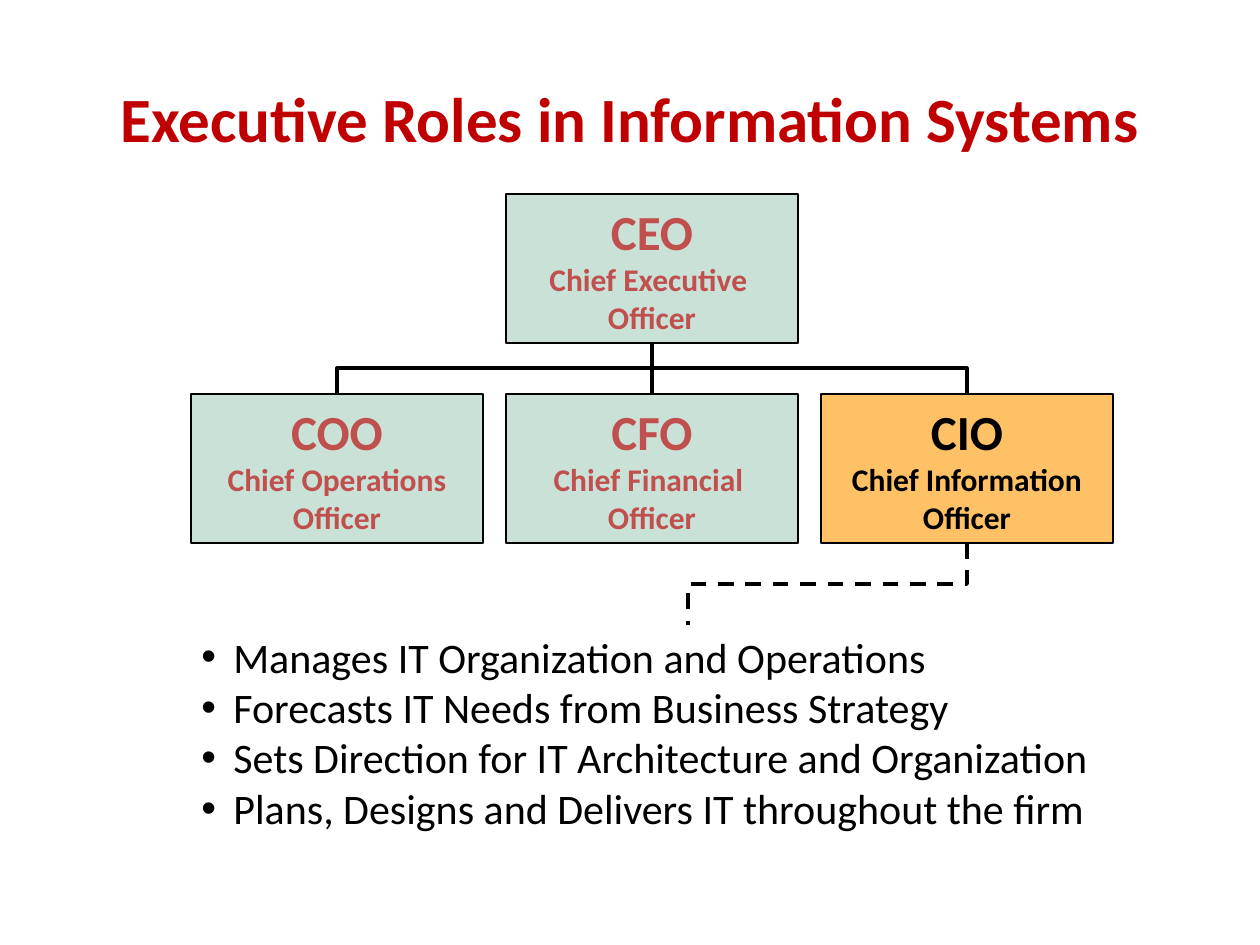
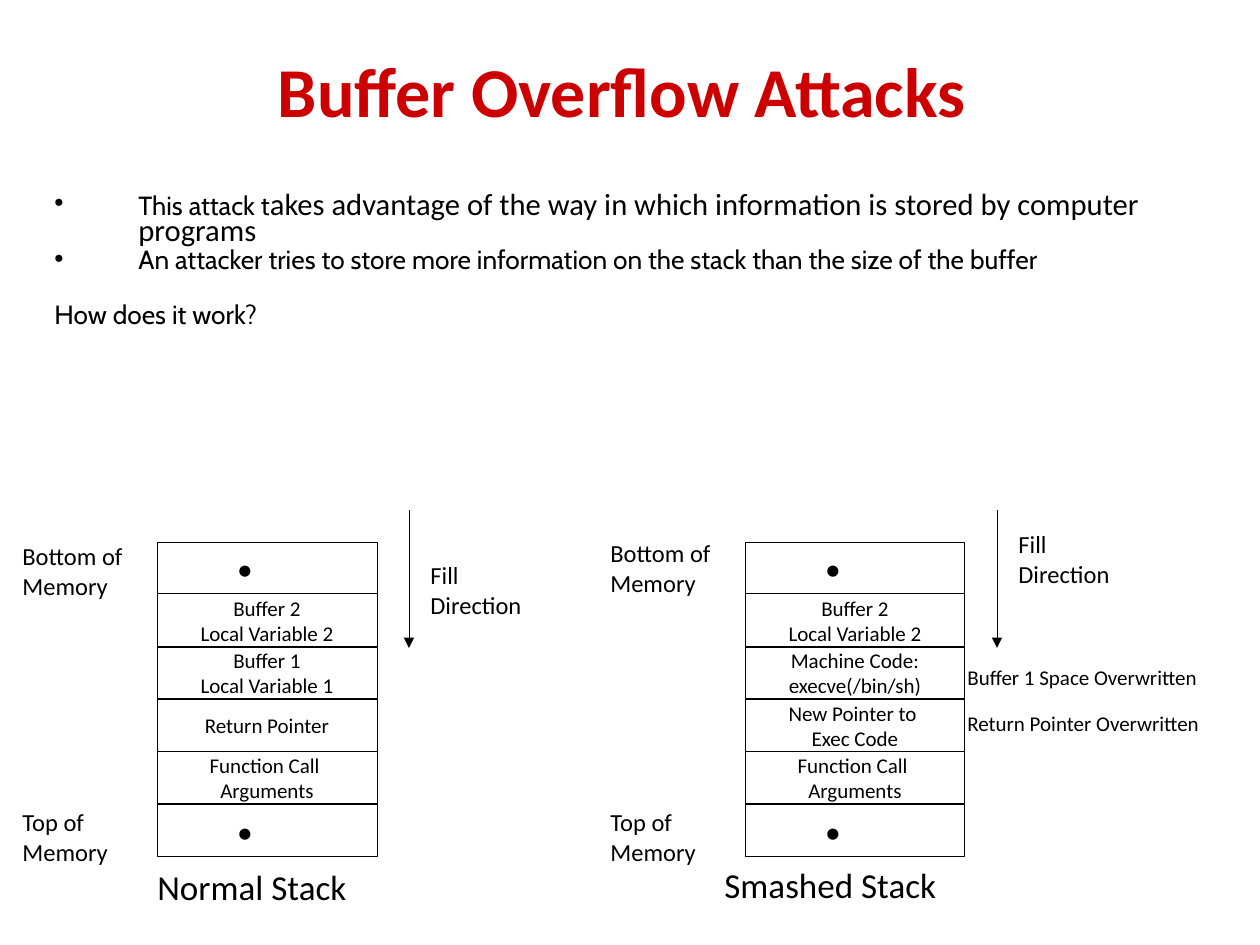
import lxml.etree
import pptx
import pptx.chart.data
import pptx.dml.color
import pptx.enum.dml
import pptx.enum.shapes
import pptx.enum.text
import pptx.oxml
import pptx.oxml.ns
import pptx.util

PIXELS_PER_INCH = 126
BLACK, WHITE = "000000", "FFFFFF"
ROLE_TEXT, ROLE_FILL, FOCUS_FILL = "C0504D", "CAE1D7", "FFC165"
SHAPES = pptx.enum.shapes.MSO_SHAPE
CONNECTORS = pptx.enum.shapes.MSO_CONNECTOR
MIDDLE = pptx.enum.text.MSO_ANCHOR.MIDDLE
TOP = pptx.enum.text.MSO_ANCHOR.TOP
LEFT = pptx.enum.text.PP_ALIGN.LEFT
CENTER = pptx.enum.text.PP_ALIGN.CENTER


def px(length):
    """Turn pixels into EMU."""
    return round(length * 914400 / PIXELS_PER_INCH)


def color(value):
    """Turn a hex string into a colour."""
    return pptx.dml.color.RGBColor.from_string(value)


def add_element(parent, tag, **attributes):
    """Append a drawing element to a parent element."""
    element = lxml.etree.SubElement(parent, pptx.oxml.ns.qn(tag))
    for name, value in attributes.items():
        element.set(name, str(value))
    return element


def write_text(shape, lines, size=12, font="Calibri", text_color=BLACK, sizes=None,
               bold=False, align=LEFT, anchor=TOP, bullets=(), hanging=0,
               line_spacing=None, space_before=()):
    """Fill a shape with paragraphs; a line is a string or a list of (text, size, font)."""
    frame = shape.text_frame
    frame.word_wrap = True
    frame.vertical_anchor = anchor
    for index, line in enumerate(lines):
        paragraph = frame.paragraphs[0] if index == 0 else frame.add_paragraph()
        paragraph.alignment = align
        if line_spacing:
            paragraph.line_spacing = line_spacing
        if space_before:
            paragraph.space_before = pptx.util.Pt(space_before[index])
        if index in bullets:
            properties = paragraph._p.get_or_add_pPr()
            properties.set("marL", str(px(hanging)))
            properties.set("indent", str(-px(hanging)))
            add_element(properties, "a:buFont", typeface="Arial")
            add_element(properties, "a:buChar", char="•")
        line_size = sizes[index] if sizes else size
        runs = [(line, line_size, font)] if isinstance(line, str) else line
        for text, run_size, run_font in runs:
            run = paragraph.add_run()
            run.text = text
            run.font.size = pptx.util.Pt(run_size)
            run.font.name = run_font
            run.font.bold = bold
            run.font.color.rgb = color(text_color)


def add_text(slide, left, top, width, height, lines, **text_format):
    """Add a text box."""
    box = slide.shapes.add_textbox(px(left), px(top), px(width), px(height))
    write_text(box, lines, **text_format)


def add_title(slide, left, top, width, height, text, **text_format):
    """Add a bold centred slide title."""
    add_text(slide, left, top, width, height, [text], bold=True, align=CENTER,
             anchor=MIDDLE, **text_format)


def add_box(slide, left, top, width, height, lines, fill=None, line_width=0.5,
            right_inset=0, **text_format):
    """Add an outlined rectangle with centred text."""
    shape = slide.shapes.add_shape(SHAPES.RECTANGLE, px(left), px(top), px(width), px(height))
    shape.shadow.inherit = False
    if fill:
        shape.fill.solid()
        shape.fill.fore_color.rgb = color(fill)
    else:
        shape.fill.background()
    shape.line.color.rgb = color(BLACK)
    shape.line.width = pptx.util.Pt(line_width)
    frame = shape.text_frame
    frame.margin_left = frame.margin_top = frame.margin_bottom = 0
    frame.margin_right = px(right_inset)
    write_text(shape, lines, align=CENTER, anchor=MIDDLE, **text_format)


def add_line(slide, start, end, width=2.25, kind=CONNECTORS.STRAIGHT, dashed=False, arrow=False):
    """Add a black connector."""
    connector = slide.shapes.add_connector(kind, *map(px, start), *map(px, end))
    connector.line.color.rgb = color(BLACK)
    connector.line.width = pptx.util.Pt(width)
    if dashed:
        connector.line.dash_style = pptx.enum.dml.MSO_LINE.DASH
    properties = connector._element.spPr
    if arrow:
        add_element(properties.find(pptx.oxml.ns.qn("a:ln")), "a:tailEnd", type="triangle")
    add_element(properties, "a:effectLst")
    return connector


def add_drop_line(slide, start, end, dashed=False):
    """Add an elbow connector that leaves and arrives vertically."""
    center_x, center_y = (start[0] + end[0]) / 2, (start[1] + end[1]) / 2
    half_run, half_drop = abs(end[0] - start[0]) / 2, (end[1] - start[1]) / 2
    goes_right = end[0] > start[0]
    side = half_drop if goes_right else -half_drop
    connector = add_line(slide, (center_x + side, center_y - half_run),
                         (center_x - side, center_y + half_run),
                         kind=CONNECTORS.ELBOW, dashed=dashed)
    connector._element.spPr.xfrm.set("rot", str((270 if goes_right else 90) * 60000))


def add_role(slide, left, top, width, height, short_name, full_name,
             fill=ROLE_FILL, text_color=ROLE_TEXT):
    """Add one executive to the chart."""
    add_box(slide, left, top, width, height, [short_name, full_name, "Officer"], fill=fill,
            line_width=0.75, sizes=(28, 18, 18), bold=True, text_color=text_color)


def add_organization(slide, left, top):
    """Add the chief executive, the three reports and their connectors."""
    width, height, pitch, level = 292, 149, 315, 200
    reports = [
        ("COO", "Chief Operations", {}),
        ("CFO", "Chief Financial ", {}),
        ("CIO", "Chief Information", {"fill": FOCUS_FILL, "text_color": BLACK}),
    ]
    middle = left + pitch + width // 2
    add_role(slide, left + pitch, top, width, height, "CEO", "Chief Executive ")
    for index, (short_name, full_name, colors) in enumerate(reports):
        report_left = left + index * pitch
        add_role(slide, report_left, top + level, width, height, short_name, full_name, **colors)
        start, end = (middle, top + height), (report_left + width // 2, top + level)
        if start[0] == end[0]:
            add_line(slide, start, end)
        else:
            add_drop_line(slide, start, end)
    add_drop_line(slide, (middle + pitch, top + level + height), (688, 625), dashed=True)


def build_roles_slide(slide):
    """Build the slide on executive roles."""
    add_title(slide, 63, 38, 1134, 158, "Executive Roles in Information Systems",
              size=36, text_color="C00000")
    add_organization(slide, 191, 194)
    duties = [
        "Manages IT Organization and Operations",
        "Forecasts IT Needs from Business Strategy",
        "Sets Direction for IT Architecture and Organization",
        "Plans, Designs and Delivers IT throughout the firm",
    ]
    add_text(slide, 189, 625, 998, 214, duties, size=24, bullets=range(4), hanging=32)


def add_stack(slide, left, top, cells, fill_top, bottom_top, caption, caption_at):
    """Add a memory stack with its labels, fill arrow and caption."""
    cell_left, cells_top, cell_width, stack_height = left + 147, top + 32, 220, 315
    rows = [["•"], *cells, ["•"]]
    edges = [cells_top + stack_height * index // len(rows) for index in range(len(rows) + 1)]
    for lines, upper, lower in zip(rows, edges, edges[1:]):
        dot = lines == ["•"]
        add_box(slide, cell_left, upper, cell_width, lower - upper, lines,
                size=18 if dot else 12, right_inset=44 if dot else 0)
    add_line(slide, (left + 399, top), (left + 399, top + 138), width=0.5, arrow=True)
    labels = [
        (408, fill_top, 131, ["Fill", "Direction"]),
        (0, bottom_top, 141, ["Bottom of", "Memory"]),
        (0, 291, 120, ["Top of", "Memory"]),
    ]
    for label_left, label_top, width, lines in labels:
        add_text(slide, left + label_left, top + label_top, width, 77, lines, size=14)
    add_text(slide, left + caption_at[0], top + caption_at[1], 285, 54, [caption], size=20)


def build_overflow_slide(slide):
    """Build the slide on buffer overflow attacks."""
    add_title(slide, 94, 10, 1071, 158, "Buffer Overflow Attacks ", size=40, text_color="CC0000")
    explanation = [
        [("This attack t", 15, "Cabin"),
         ("akes advantage of the way in which information is stored by computer programs",
          17.5, "Calibri"),
         (" ", 15, "Cabin")],
        "An attacker tries to store more information on the stack than the size of the buffer",
        "How does it work?",
    ]
    add_text(slide, 42, 189, 1218, 179, explanation, size=15, font="Cabin", bullets=(0, 1),
             hanging=84, line_spacing=0.7, space_before=(3, 3, 19))
    buffer_cell = ["Buffer 2", "Local Variable 2"]
    arguments_cell = ["Function Call ", "Arguments"]
    top, smashed_left = 510, 598
    add_stack(slide, 10, top,
              [buffer_cell, ["Buffer 1", "Local Variable 1"], ["Return Pointer"], arguments_cell],
              44, 25, "Normal Stack", (135, 349))
    add_stack(slide, smashed_left, top,
              [buffer_cell, ["Machine Code:", "execve(/bin/sh)"],
               ["New Pointer to ", "Exec Code"], arguments_cell],
              13, 22, "Smashed Stack", (114, 347))
    notes = [(148, "Buffer 1 Space Overwritten"), (194, "Return Pointer Overwritten")]
    for note_top, text in notes:
        add_text(slide, smashed_left + 357, top + note_top, 315, 38, [text])


def main():
    """Build and save the presentation."""
    presentation = pptx.Presentation()
    presentation.slide_width, presentation.slide_height = px(1260), px(945)
    for build in (build_roles_slide, build_overflow_slide):
        slide = presentation.slides.add_slide(presentation.slide_layouts[6])
        slide.background.fill.solid()
        slide.background.fill.fore_color.rgb = color(WHITE)
        build(slide)
    presentation.save("out.pptx")


if __name__ == "__main__":
    main()
